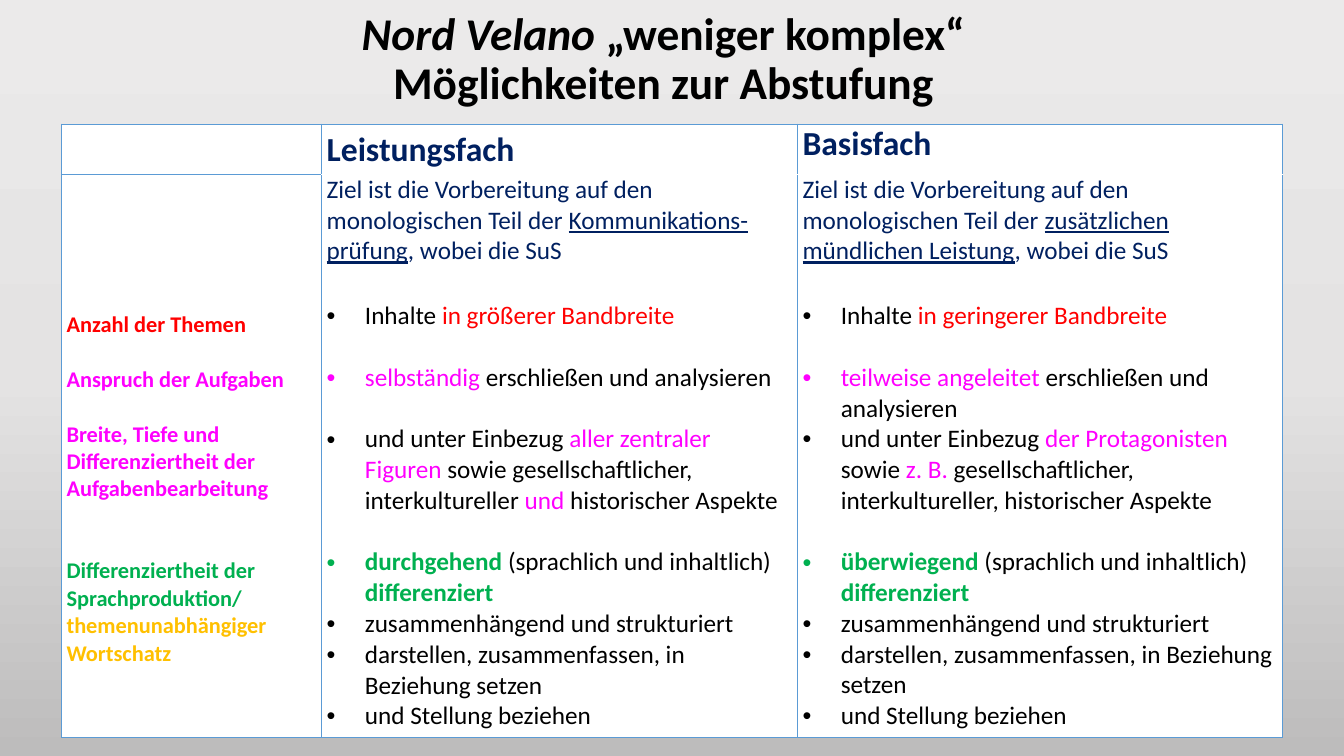
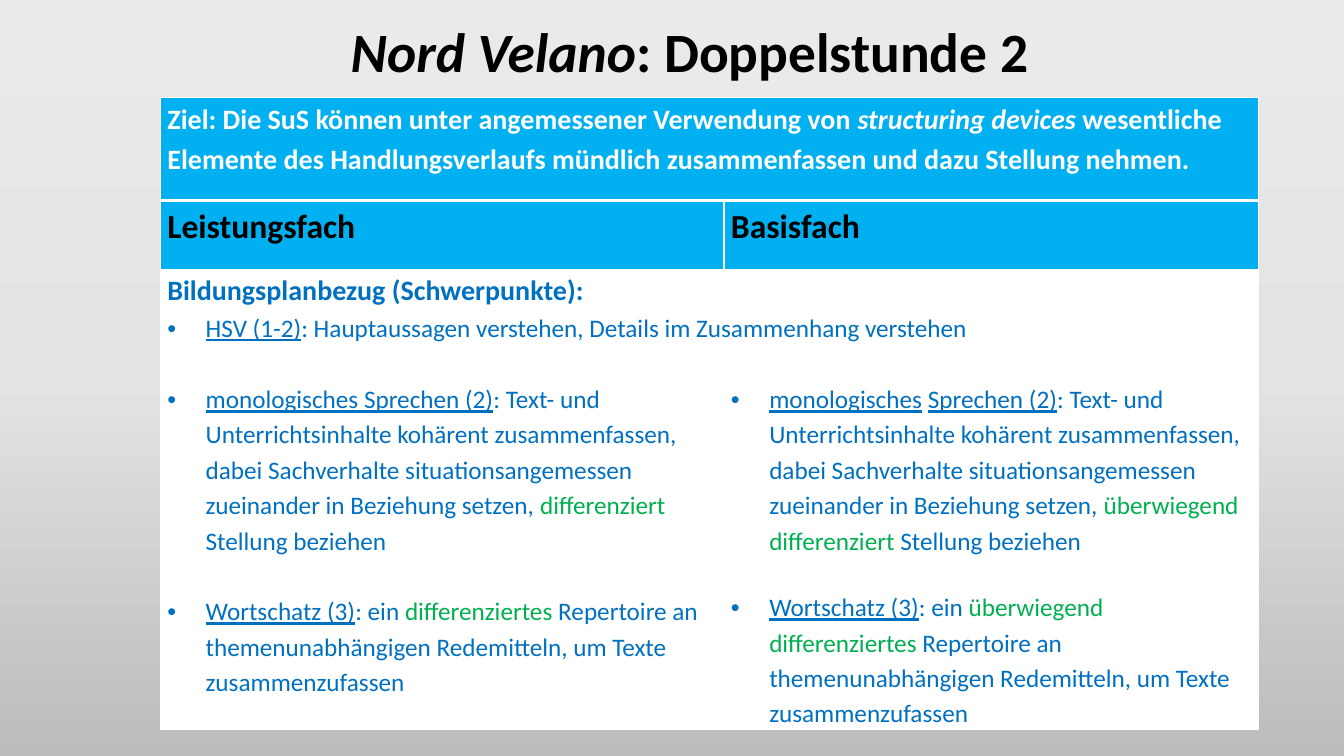
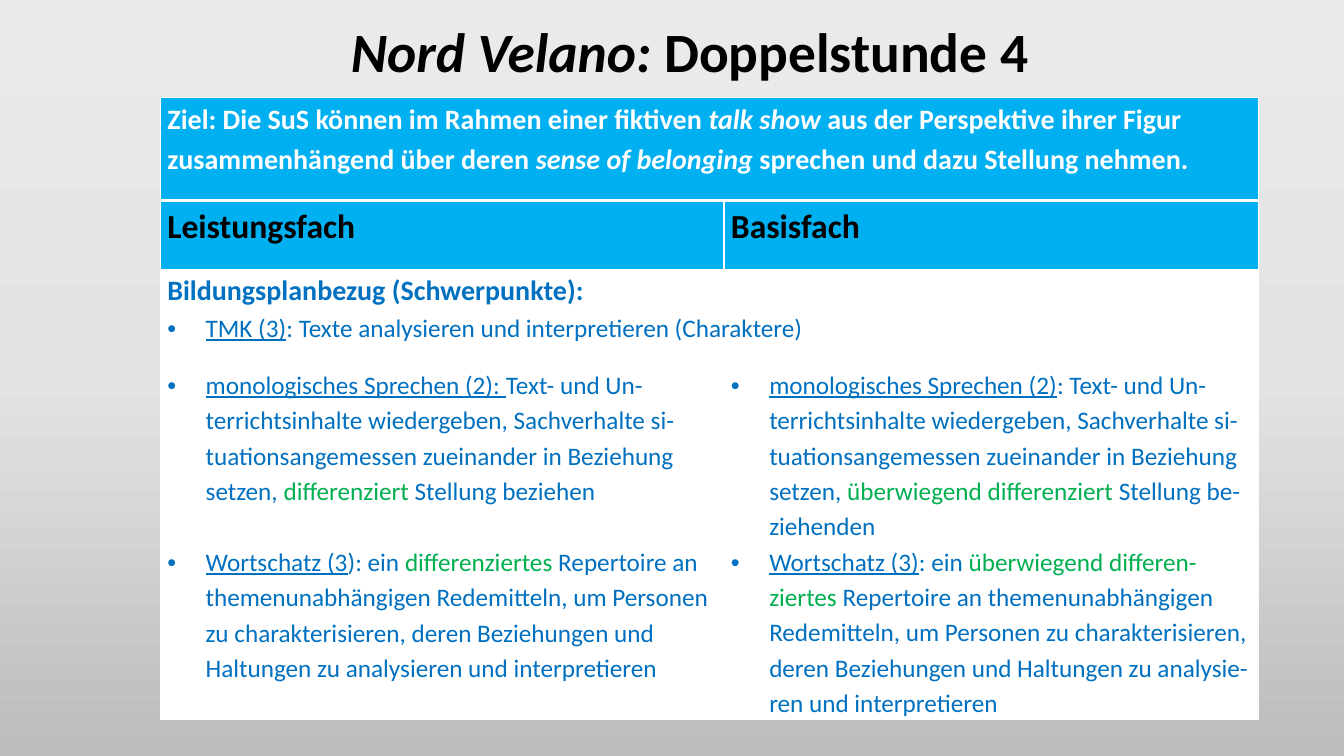
import copy
from dataclasses import dataclass

import pptx
import pptx.dml.color
import pptx.enum.text
import pptx.oxml
import pptx.oxml.ns
import pptx.util

Inches, Pt = pptx.util.Inches, pptx.util.Pt


@dataclass(frozen=True)
class Theme:
    font: str = "Calibri"
    black: str = "000000"
    white: str = "FFFFFF"
    navy: str = "002060"
    blue: str = "0070C0"
    sky: str = "00B0F0"
    grid: str = "5B9BD5"
    red: str = "FF0000"
    pink: str = "FF00FF"
    green: str = "00B050"
    amber: str = "FFC000"
    background: tuple = ((0, "EBEAEA"), (0.5, "E4E3E3"), (1, "BDBCBC"))
    overview_title: float = 32.4
    lesson_title: float = 39.6
    heading: int = 24
    goal: int = 20
    body: int = 18
    label: int = 16
    indent: float = 0.38
    line_height: float = 1.22


THEME = Theme()


@dataclass
class Para:
    """Runs are (text, style words); gap is the type size of the line left free above."""
    runs: list
    size: int = THEME.body
    bullet: bool = False
    gap: int = 0
    spacing: float = 1.0


def item(*runs, gap=0, spacing=1.0):
    return Para(list(runs), bullet=True, gap=gap, spacing=spacing)


def label(*runs, gap=0):
    return Para(list(runs), size=THEME.label, gap=gap)


# Content: overview slide
FILM = "Nord Velano"
OVERVIEW_TITLE = [(FILM, "italic"), (" „weniger komplex“\nMöglichkeiten zur Abstufung", "")]
COURSE_HEADINGS = [("Leistungsfach", 1.15), ("Basisfach", 1.0)]
CRITERIA = [
    label(("Anzahl der Themen", "red bold")),
    label(("Anspruch der Aufgaben", "pink bold"), gap=16),
    label(("Breite, Tiefe und Differenziertheit der Aufgabenbearbeitung", "pink bold"), gap=16),
    label(("Differenziertheit der Sprachproduktion/ ", "green bold"),
          ("themenunabhängiger Wortschatz", "amber bold"), gap=32),
]


def course_column(exam, breadth, tasks, aspects, aspects_gap, degree):
    return [
        Para([("Ziel ist die Vorbereitung auf den monologischen Teil der ", "navy"),
              (exam, "navy underline"), (", wobei die SuS", "navy")]),
        item(("Inhalte ", "black"), (breadth, "red"), gap=20),
        item(*tasks, gap=18),
        item(("und unter Einbezug ", "black"), *aspects, gap=aspects_gap),
        item((degree, "green bold"), ("(sprachlich und inhaltlich) ", "black"),
             ("differenziert", "green bold"), gap=18),
        item(("zusammenhängend und strukturiert", "black")),
        item(("darstellen, zusammenfassen, in Beziehung setzen", "black")),
        item(("und Stellung beziehen", "black")),
    ]


ADVANCED = course_column(
    "Kommunikations-prüfung", "in größerer Bandbreite",
    [("selbständig", "pink"), (" erschließen und analysieren", "black")],
    [("aller zentraler Figuren ", "pink"),
     ("sowie gesellschaftlicher, interkultureller ", "black"),
     ("und", "pink"), (" historischer Aspekte", "black")], 18, "durchgehend ")
BASIC = course_column(
    "zusätzlichen mündlichen Leistung", "in geringerer Bandbreite",
    [("teilweise angeleitet ", "pink"), ("erschließen und analysieren", "black")],
    [("der Protagonisten ", "pink"), ("sowie ", "black"), ("z. B. ", "pink"),
     ("gesellschaftlicher, interkultureller, historischer Aspekte", "black")], 0, "überwiegend ")


# Content: lesson slides
def skill(*runs, gap=0):
    return item(*runs, gap=gap, spacing=1.15)


SUMMARY = (": Text- und Unterrichtsinhalte kohärent zusammenfassen, dabei Sachverhalte "
           "situationsangemessen zueinander in Beziehung setzen, ")
RETELLING = ("Text- und Un-terrichtsinhalte wiedergeben, Sachverhalte si-tuationsangemessen "
             "zueinander in Beziehung setzen, ")
LESSONS = [
    {
        "title": [(FILM, "italic"), (": Doppelstunde 2", "")],
        "goal": [("Ziel: Die SuS können unter angemessener Verwendung von ", ""),
                 ("structuring devices ", "italic"),
                 ("wesentliche Elemente des Handlungsverlaufs mündlich zusammenfassen "
                  "und dazu Stellung nehmen.", "")],
        "standard": ("HSV (1-2)", ": Hauptaussagen verstehen, Details im Zusammenhang verstehen"),
        "rows": [1.02, 0.68, 1.1, 3.47],
        "skills": [
            [skill(("monologisches Sprechen (2)", "blue underline"), (SUMMARY, "blue"),
                   ("differenziert", "green"), (" Stellung beziehen", "blue")),
             skill(("Wortschatz (3)", "blue underline"), (": ein ", "blue"),
                   ("differenziertes", "green"),
                   (" Repertoire an themenunabhängigen Redemitteln, um Texte "
                    "zusammenzufassen", "blue"), gap=18)],
            [skill(("monologisches", "blue underline"), (" ", "blue"),
                   ("Sprechen (2)", "blue underline"), (SUMMARY, "blue"),
                   ("überwiegend differenziert ", "green"), ("Stellung beziehen", "blue")),
             skill(("Wortschatz (3)", "blue underline"), (": ein ", "blue"),
                   ("überwiegend differenziertes ", "green"),
                   ("Repertoire an themenunabhängigen Redemitteln, um Texte "
                    "zusammenzufassen", "blue"), gap=16)],
        ],
    },
    {
        "title": [(FILM + ": ", "italic"), ("Doppelstunde 4", "")],
        "goal": [("Ziel: Die SuS können im Rahmen einer fiktiven ", ""), ("talk show", "italic"),
                 (" aus der Perspektive ihrer Figur zusammenhängend über deren ", ""),
                 ("sense of belonging", "italic"),
                 (" sprechen und dazu Stellung nehmen.", "")],
        "standard": ("TMK (3)", ": Texte analysieren und interpretieren (Charaktere)"),
        "rows": [1.02, 0.68, 0.96, 3.47],
        "skills": [
            [skill(("monologisches Sprechen (2): ", "blue underline"), (RETELLING, "blue"),
                   ("differenziert", "green"), (" Stellung beziehen", "blue")),
             skill(("Wortschatz (3", "blue underline"), ("): ein ", "blue"),
                   ("differenziertes", "green"),
                   (" Repertoire an themenunabhängigen Redemitteln, um Personen zu "
                    "charakterisieren, deren Beziehungen und Haltungen zu analysieren "
                    "und interpretieren", "blue"), gap=18)],
            [skill(("monologisches Sprechen (2)", "blue underline"), (": " + RETELLING, "blue"),
                   ("überwiegend differenziert ", "green"), ("Stellung be-ziehenden", "blue")),
             skill(("Wortschatz (3)", "blue underline"), (": ein ", "blue"),
                   ("überwiegend differen-ziertes", "green"),
                   (" Repertoire an themenunabhängigen Redemitteln, um Personen zu "
                    "charakterisieren, deren Beziehungen und Haltungen zu analysie-ren "
                    "und interpretieren", "blue"))],
        ],
    },
]


# Text helpers
def rgb(value):
    return pptx.dml.color.RGBColor.from_string(value)


def add_run(paragraph, text, style, size):
    """Add a run; the style words name a theme colour and bold, italic or underline."""
    words = style.split()
    flags = {"bold", "italic", "underline"}
    color = next((word for word in words if word not in flags), "black")
    for number, line in enumerate(text.split("\n")):
        if number:
            paragraph.add_line_break()
        run = paragraph.add_run()
        run.text = line
        font = run.font
        font.name, font.size = THEME.font, Pt(size)
        font.color.rgb = rgb(getattr(THEME, color))
        font.bold, font.italic = "bold" in words, "italic" in words
        font.underline = "underline" in words


def add_bullet(paragraph):
    properties = paragraph._p.get_or_add_pPr()
    properties.set("marL", str(Inches(THEME.indent)))
    properties.set("indent", str(-Inches(THEME.indent)))
    for tag, name, value in (("a:buFont", "typeface", "Arial"), ("a:buChar", "char", "•")):
        bullet = pptx.oxml.parse_xml(f"<{tag} {pptx.oxml.ns.nsdecls('a')}/>")
        bullet.set(name, value)
        properties.append(bullet)


def fill_cell(cell, paras, fill, inset, top=0):
    cell.fill.solid()
    cell.fill.fore_color.rgb = rgb(fill)
    cell.margin_left = cell.margin_right = Inches(inset)
    cell.margin_top, cell.margin_bottom = Inches(top), 0
    frame = cell.text_frame
    for number, para in enumerate(paras):
        paragraph = frame.add_paragraph() if number else frame.paragraphs[0]
        paragraph.line_spacing = para.spacing
        paragraph.space_before = Pt(round(para.gap * THEME.line_height * para.spacing, 1))
        if para.bullet:
            add_bullet(paragraph)
        for text, style in para.runs:
            add_run(paragraph, text, style, para.size)


def set_borders(cell, **sides):
    """Draw cell borders given as side=(colour, points)."""
    properties = cell._tc.get_or_add_tcPr()
    for position, side in enumerate(side for side in "LRTB" if side in sides):
        color, width = sides[side]
        properties.insert(position, pptx.oxml.parse_xml(
            f'<a:ln{side} {pptx.oxml.ns.nsdecls("a")} w="{Pt(width)}"><a:solidFill>'
            f'<a:srgbClr val="{color}"/></a:solidFill></a:ln{side}>'))


# Shared slide parts
def set_background(presentation):
    master = presentation.slide_master
    fill = master.background.fill
    fill.gradient()
    fill.gradient_angle = 270
    stop_list = master.element.find(".//" + pptx.oxml.ns.qn("a:gsLst"))
    stop_list.append(copy.deepcopy(stop_list[-1]))
    for stop, (position, color) in zip(fill.gradient_stops, THEME.background):
        stop.position = position
        stop.color.rgb = rgb(color)


def add_titled_slide(presentation, runs, box, size):
    slide = presentation.slides.add_slide(presentation.slide_layouts[5])
    title = slide.shapes.title
    title.left, title.top, title.width, title.height = map(Inches, box)
    frame = title.text_frame
    frame.auto_size = pptx.enum.text.MSO_AUTO_SIZE.NONE
    frame.vertical_anchor = pptx.enum.text.MSO_ANCHOR.MIDDLE
    paragraph = frame.paragraphs[0]
    paragraph.alignment = pptx.enum.text.PP_ALIGN.CENTER
    paragraph.line_spacing = 0.9
    for text, style in runs:
        add_run(paragraph, text, style + " bold", size)
    return slide


def add_grid(slide, left, top, columns, rows):
    table = slide.shapes.add_table(
        len(rows), len(columns), Inches(left), Inches(top),
        Inches(sum(columns)), Inches(sum(rows))).table
    table.first_row = table.horz_banding = False
    for column, width in zip(table.columns, columns):
        column.width = Inches(width)
    for row, height in zip(table.rows, rows):
        row.height = Inches(height)
    return table


# Slides
def build_overview(presentation):
    slide = add_titled_slide(presentation, OVERVIEW_TITLE, (0.44, 0.05, 12.28, 1.1),
                             THEME.overview_title)
    table = add_grid(slide, 0.61, 1.23, [2.58, 4.72, 4.81], [0.5, 5.58])
    headings = [[]] + [[Para([(text, "navy bold")], THEME.heading, spacing=spacing)]
                       for text, spacing in COURSE_HEADINGS]
    line, blank = (THEME.grid, 0.5), (THEME.white, 1)
    for column, (heading, body) in enumerate(zip(headings, [CRITERIA, ADVANCED, BASIC])):
        rule = blank if column else line
        header, content = table.cell(0, column), table.cell(1, column)
        fill_cell(header, heading, THEME.white, 0.05)
        fill_cell(content, body, THEME.white, 0.05, top=0 if column else 1.36)
        set_borders(header, L=line, R=line, T=line, B=rule)
        set_borders(content, L=line, R=line, T=rule, B=line)


def build_lesson(presentation, lesson):
    slide = add_titled_slide(presentation, lesson["title"], (1.59, 0.23, 10.5, 0.63),
                             THEME.lesson_title)
    table = add_grid(slide, 1.59, 0.97, [5.59, 5.3], lesson["rows"])
    for row in (0, 2):
        table.cell(row, 0).merge(table.cell(row, 1))
    name, description = lesson["standard"]
    goal = [Para([(text, style + " white bold") for text, style in lesson["goal"]],
                 THEME.goal, spacing=1.15)]
    standards = [
        Para([("Bildungsplanbezug (Schwerpunkte):", "blue bold")], THEME.goal, spacing=1.15),
        skill((name, "blue underline"), (description, "blue"))]
    courses = [[Para([(text, "black bold")], THEME.heading, spacing=1.15)]
               for text, _ in COURSE_HEADINGS]
    contents = [[goal, []], courses, [standards, []], lesson["skills"]]
    line, thick = (THEME.white, 1), (THEME.white, 3)
    for row, cells in enumerate(contents):
        for column, paras in enumerate(cells):
            cell = table.cell(row, column)
            fill_cell(cell, paras, THEME.sky if row < 2 else THEME.white, 0.07)
            set_borders(cell, L=line, R=line, T=thick if row == 1 else line,
                        B=thick if row == 0 else line)


def main():
    presentation = pptx.Presentation()
    presentation.slide_width, presentation.slide_height = Inches(13.33), Inches(7.5)
    set_background(presentation)
    build_overview(presentation)
    for lesson in LESSONS:
        build_lesson(presentation, lesson)
    presentation.save("out.pptx")


if __name__ == "__main__":
    main()
